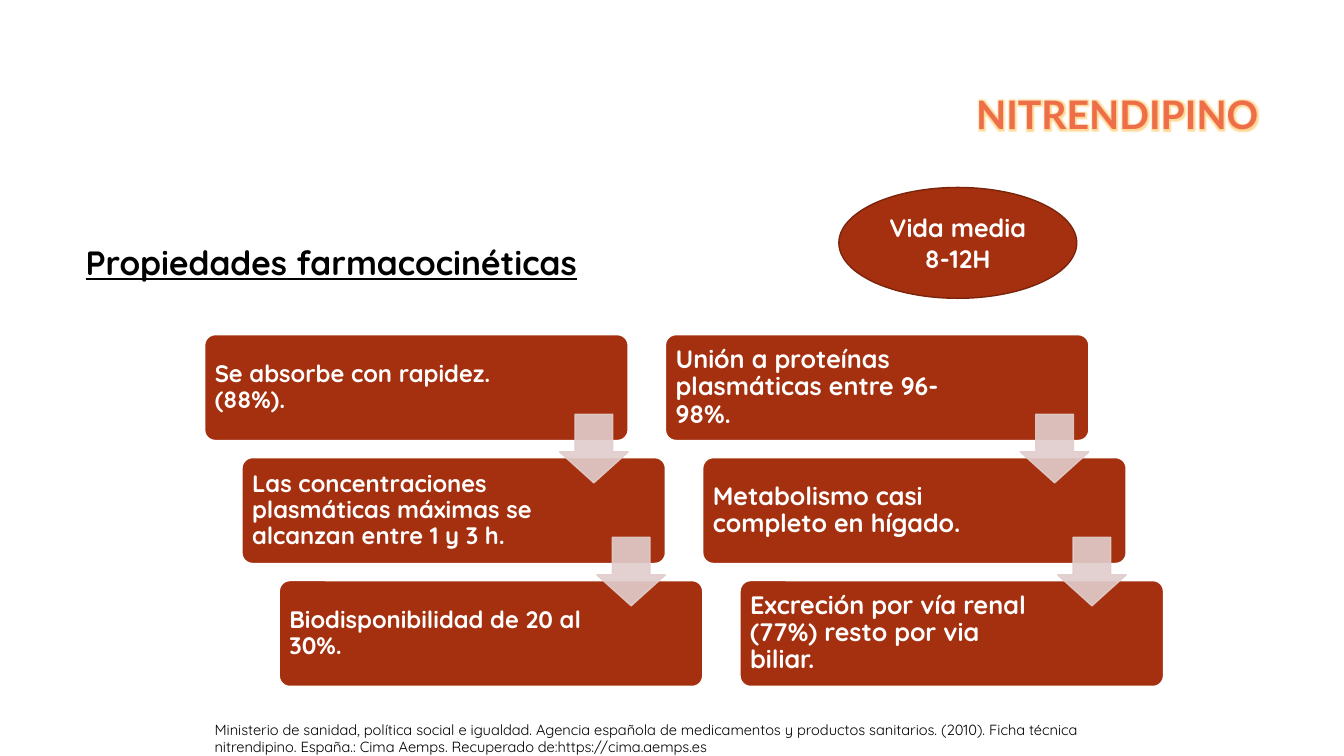
from lxml import etree
from pptx import Presentation
from pptx import util as u
from pptx.dml.color import RGBColor
from pptx.enum import shapes, text
from pptx.oxml import ns

COLORS = {
    "rust": "A5300F", "rust_dark": "7A240B", "arrow": "E1CDCC",
    "title": "EE6E4A", "glow": "FFC04D", "white": "FFFFFF", "black": "000000",
}


class SlideBuilder:
    font = "Quicksand"

    def __init__(self, s):
        self.s = s

    def color(self, name):
        return RGBColor.from_string(COLORS[name])

    def box(self, at):
        return [u.Inches(n) for n in at]

    def set_text(self, sp, words, size, color, bold=True, font=None, inset=None,
                 anchor=text.MSO_ANCHOR.TOP, align=text.PP_ALIGN.LEFT,
                 spacing=1.0, underline=False):
        tf = sp.text_frame
        tf.word_wrap = True
        tf.vertical_anchor = anchor
        if inset is not None:
            tf.margin_left = tf.margin_right = u.Inches(inset)
            tf.margin_top = tf.margin_bottom = u.Inches(inset)
        tf.text = words
        p = tf.paragraphs[0]
        p.alignment = align
        p.line_spacing = spacing
        r = p.runs[0]
        r.font.size = u.Pt(size)
        r.font.bold = bold
        r.font.underline = underline
        r.font.name = font or self.font
        r.font.color.rgb = self.color(color)
        return r

    def label(self, at, words, size, color, **style):
        sp = self.s.shapes.add_textbox(*self.box(at))
        return self.set_text(sp, words, size, color, **style)

    def shape(self, kind, at, fill, line, adjustments=()):
        sp = self.s.shapes.add_shape(kind, *self.box(at))
        sp.shadow.inherit = False
        sp.fill.solid()
        sp.fill.fore_color.rgb = self.color(fill)
        sp.line.color.rgb = self.color(line)
        sp.line.width = u.Pt(1)
        for i, value in enumerate(adjustments):
            sp.adjustments[i] = value
        return sp

    def card(self, x, y, words, size):
        self.shape(shapes.MSO_SHAPE.ROUNDED_RECTANGLE, (x, y, 4.2, 1.05),
                   "rust", "white", [0.1])
        self.label((x + 0.03, y + 0.03, 3.08, 0.99), words, size, "white",
                   inset=0.07, anchor=text.MSO_ANCHOR.MIDDLE, spacing=0.9)

    def arrow(self, x, y):
        sp = self.shape(shapes.MSO_SHAPE.DOWN_ARROW, (x, y, 0.68, 0.68),
                        "arrow", "arrow", [0.55, 0.45])
        for clr in sp._element.spPr.iter(ns.qn("a:srgbClr")):
            etree.SubElement(clr, ns.qn("a:alpha"), val="90000")

    def cascade(self, left, size, steps):
        top, dx, dy = 3.32, 0.37, 1.22
        for i, words in enumerate(steps):
            self.card(left + i * dx, top + i * dy, words, size)
        for i in range(len(steps) - 1):
            self.arrow(left + 3.52 + i * dx, top + 0.79 + i * dy)

    def glow(self, r, color, radius):
        effects = etree.Element(ns.qn("a:effectLst"))
        glow = etree.SubElement(effects, ns.qn("a:glow"), rad=str(u.Pt(radius)))
        clr = etree.SubElement(glow, ns.qn("a:srgbClr"), val=COLORS[color])
        etree.SubElement(clr, ns.qn("a:alpha"), val="60000")
        r.font._element.find(ns.qn("a:solidFill")).addnext(effects)


def main():
    prs = Presentation()
    prs.slide_width, prs.slide_height = u.Inches(13.33), u.Inches(7.5)
    b = SlideBuilder(prs.slides.add_slide(prs.slide_layouts[6]))

    title = b.label((3.17, 0.84, 9.42, 1.41), "NITRENDIPINO", 28, "title",
                    font="Lato", inset=0.11, align=text.PP_ALIGN.RIGHT,
                    spacing=0.9)
    b.glow(title, "glow", 5)
    b.label((0.75, 2.4, 11.83, 4.4), "Propiedades farmacocinéticas", 24,
            "black", spacing=0.9, underline=True)

    b.cascade(6.6, 18, [
        "Unión a proteínas plasmáticas entre 96-98%.",
        "Metabolismo casi completo en hígado.",
        "Excreción por vía renal (77%) resto por via biliar.",
    ])
    b.cascade(2.03, 17, [
        "Se absorbe con rapidez. (88%).",
        "Las concentraciones plasmáticas máximas se alcanzan entre 1 y 3 h.",
        "Biodisponibilidad de 20 al 30%.",
    ])

    half_life = b.shape(shapes.MSO_SHAPE.OVAL, (8.32, 1.86, 2.36, 1.1),
                        "rust", "rust_dark")
    b.set_text(half_life, "Vida media 8-12H", 18, "white",
               anchor=text.MSO_ANCHOR.MIDDLE, align=text.PP_ALIGN.CENTER)

    b.label((2.03, 7.1, 9.52, 0.45),
            "Ministerio de sanidad, política social e igualdad. Agencia "
            "española de medicamentos y productos sanitarios. (2010). Ficha "
            "técnica nitrendipino. España.: Cima Aemps. Recuperado "
            "de:https://cima.aemps.es", 10.5, "black", bold=False)

    prs.save("out.pptx")


if __name__ == "__main__":
    main()
